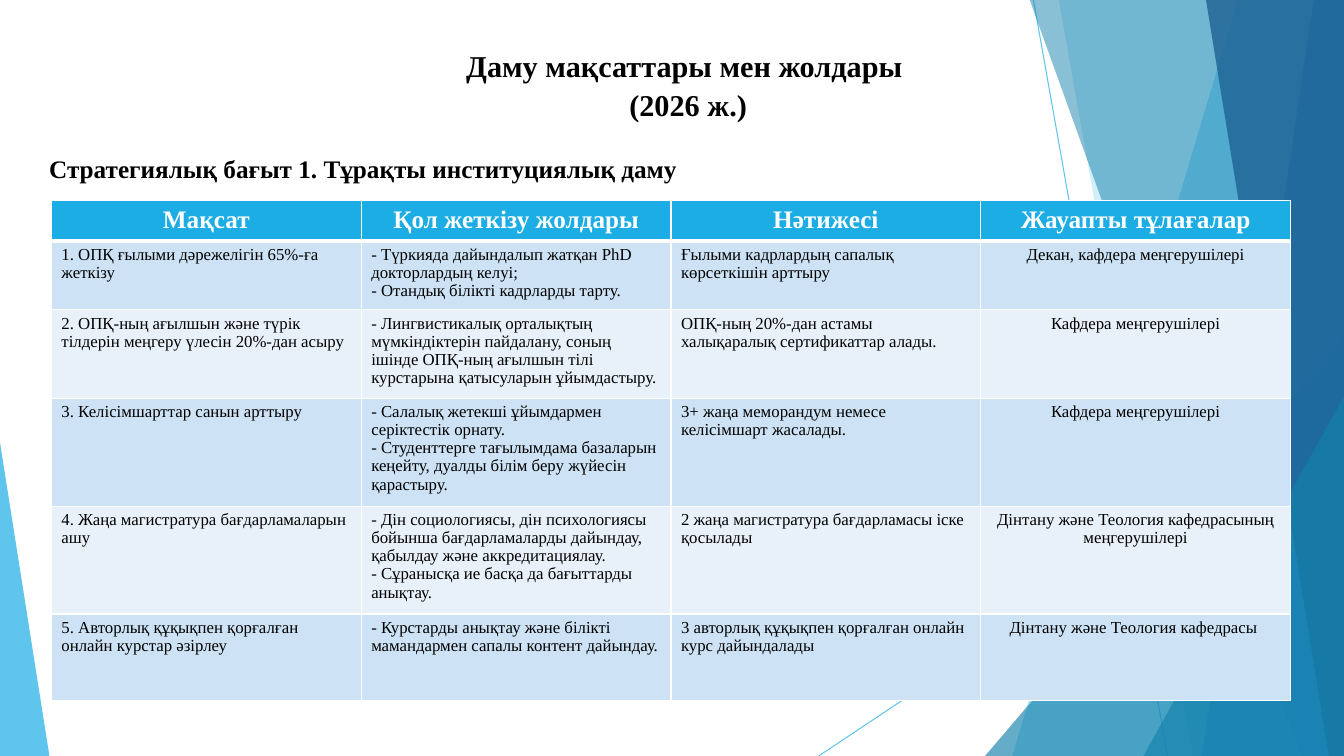
from dataclasses import dataclass

from lxml import etree
from pptx import Presentation
from pptx.dml.color import RGBColor
from pptx.enum.shapes import MSO_CONNECTOR, MSO_SHAPE
from pptx.enum.text import PP_ALIGN
from pptx.oxml.ns import qn
from pptx.util import Inches, Pt

LEFT, CENTER = PP_ALIGN.LEFT, PP_ALIGN.CENTER
STRAIGHT, TRIANGLE = MSO_CONNECTOR.STRAIGHT, MSO_SHAPE.ISOSCELES_TRIANGLE


@dataclass(frozen=True)
class Theme:
    font: str = "Times New Roman"
    title: float = 21.6
    heading: float = 18
    body: float = 12
    ink: str = "000000"
    white: str = "FFFFFF"
    sky: str = "1CADE4"
    teal: str = "1482AC"
    blue: str = "2683C6"
    navy: str = "1D6294"
    bands: tuple = ("CDE3F5", "E8F1FA")


THEME = Theme()

TITLE = "Даму мақсаттары мен жолдары \v(2026 ж.)"
DIRECTION = "Стратегиялық бағыт 1. Тұрақты институциялық даму"
HEADER = ("Мақсат", "Қол жеткізу жолдары", "Нәтижесі", "Жауапты тұлағалар")
GOALS = [
    ("1. ОПҚ ғылыми дәрежелігін 65%-ға жеткізу",
     "- Түркияда дайындалып жатқан PhD докторлардың келуі;\n"
     "- Отандық білікті кадрларды тарту.",
     "Ғылыми кадрлардың сапалық көрсеткішін арттыру",
     "Декан, кафдера меңгерушілері"),
    ("2. ОПҚ-ның ағылшын және түрік тілдерін меңгеру үлесін 20%-дан асыру",
     "- Лингвистикалық орталықтың мүмкіндіктерін пайдалану, соның ішінде "
     "ОПҚ-ның ағылшын тілі курстарына қатысуларын ұйымдастыру.",
     "ОПҚ-ның 20%-дан астамы халықаралық сертификаттар алады.",
     "Кафдера меңгерушілері"),
    ("3. Келісімшарттар санын арттыру",
     "- Салалық жетекші ұйымдармен серіктестік орнату.\n"
     "- Студенттерге тағылымдама базаларын кеңейту, дуалды білім беру "
     "жүйесін қарастыру.",
     "3+ жаңа меморандум немесе келісімшарт жасалады.",
     "Кафдера меңгерушілері"),
    ("4. Жаңа магистратура бағдарламаларын ашу",
     "- Дін социологиясы, дін психологиясы бойынша бағдарламаларды дайындау, "
     "қабылдау және аккредитациялау.\n"
     "- Сұранысқа ие басқа да бағыттарды анықтау.",
     "2 жаңа магистратура бағдарламасы іске қосылады",
     "Дінтану және Теология кафедрасының меңгерушілері"),
    ("5. Авторлық құқықпен қорғалған онлайн курстар әзірлеу",
     "- Курстарды анықтау және білікті мамандармен сапалы контент дайындау.",
     "3 авторлық құқықпен қорғалған онлайн курс дайындалады",
     "Дінтану және Теология кафедрасы "),
]

WIDTH, HEIGHT = 13.33, 7.5
BLEED = -0.01
TABLE_LEFT, TABLE_TOP, TABLE_WIDTH = 0.51, 1.99, 12.29
ROW_HEIGHTS = (0.38, 0.67, 0.86, 1.05, 1.05, 0.86)

RAYS = [((10.25, 0), (11.58, HEIGHT)), ((WIDTH, 4.03), (8.12, HEIGHT))]
# Facets reach the right edge: (x at top, x at bottom, colour, opacity %)
# Wedges stand on the bottom edge: (left, top, width, apex, colour, opacity %)
BACKDROP = [
    ("facet", 12.28, 10.04, THEME.sky, 36),
    ("facet", 10.5, 11.83, THEME.sky, 20),
    ("wedge", 9.77, 3.33, 3.56, 1, THEME.teal, 66),
    ("facet", 10.21, 12.91, THEME.teal, 50),
    ("facet", 13.03, 11.92, THEME.blue, 70),
    ("facet", 11.96, 13.18, THEME.navy, 80),
    ("wedge", 11.34, 3.93, 1.99, 1, THEME.teal, 66),
    ("wedge", 0, 4.39, 0.49, 0, THEME.sky, 70),
]


def set_opacity(element, percent):
    for colour in element.iter(qn("a:srgbClr")):
        etree.SubElement(colour, qn("a:alpha"), val=str(percent * 1000))


def paint(shape, colour, opacity):
    shape.shadow.inherit = False
    shape.fill.solid()
    shape.fill.fore_color.rgb = RGBColor.from_string(colour)
    shape.line.fill.background()
    set_opacity(shape.element, opacity)


def add_ray(slide, start, end):
    ray = slide.shapes.add_connector(STRAIGHT, *map(Inches, start + end))
    ray.line.width = Pt(0.75)
    ray.line.color.rgb = RGBColor.from_string(THEME.sky)
    set_opacity(ray.element, 70)
    etree.SubElement(ray.element.spPr, qn("a:effectLst"))


def add_facet(slide, top_x, bottom_x, colour, opacity):
    corners = [(WIDTH, BLEED), (WIDTH, HEIGHT), (bottom_x, HEIGHT)]
    outline = slide.shapes.build_freeform(Inches(top_x), Inches(BLEED))
    outline.add_line_segments([(Inches(x), Inches(y)) for x, y in corners])
    paint(outline.convert_to_shape(), colour, opacity)


def add_wedge(slide, left, top, width, apex, colour, opacity):
    box = map(Inches, (left, top, width, HEIGHT - top))
    wedge = slide.shapes.add_shape(TRIANGLE, *box)
    wedge.adjustments[0] = apex
    paint(wedge, colour, opacity)


def write(frame, text, size=THEME.body, colour=THEME.ink, bold=False,
          align=LEFT, spacing=1.0):
    """Fill a text frame, one paragraph per line of text."""
    frame.word_wrap = True
    for index, line in enumerate(text.split("\n")):
        paragraph = frame.add_paragraph() if index else frame.paragraphs[0]
        paragraph.text = line
        paragraph.alignment = align
        paragraph.line_spacing = spacing
        for run in paragraph.runs:
            run.font.name = THEME.font
            run.font.size = Pt(size)
            run.font.bold = bold
            run.font.color.rgb = RGBColor.from_string(colour)


def add_text(slide, box, text, **style):
    write(slide.shapes.add_textbox(*map(Inches, box)).text_frame, text, **style)


def style_cell(cell, colour, edges):
    """Edges give the white border widths in points: left, right, top, bottom."""
    properties = cell._tc.get_or_add_tcPr()
    for side, width in zip("LRTB", edges):
        border = etree.SubElement(properties, qn(f"a:ln{side}"), w=str(Pt(width)))
        fill = etree.SubElement(border, qn("a:solidFill"))
        etree.SubElement(fill, qn("a:srgbClr"), val=THEME.white)
    cell.fill.solid()
    cell.fill.fore_color.rgb = RGBColor.from_string(colour)


def add_goals_table(slide):
    rows = [HEADER, *GOALS]
    box = (TABLE_LEFT, TABLE_TOP, TABLE_WIDTH, sum(ROW_HEIGHTS))
    table = slide.shapes.add_table(len(rows), len(HEADER), *map(Inches, box)).table
    for column in table.columns:
        column.width = Inches(TABLE_WIDTH / len(HEADER))
    for r, texts in enumerate(rows):
        table.rows[r].height = Inches(ROW_HEIGHTS[r])
        for c, text in enumerate(texts):
            cell = table.cell(r, c)
            if r == 0:
                style_cell(cell, THEME.sky, (1, 1, 1, 3))
                write(cell.text_frame, text, size=THEME.heading,
                      colour=THEME.white, bold=True, align=CENTER)
            else:
                style_cell(cell, THEME.bands[(r - 1) % 2],
                           (1, 1, 3 if r == 1 else 1, 1))
                write(cell.text_frame, text, spacing=0.97,
                      align=CENTER if c == len(HEADER) - 1 else LEFT)


def main():
    deck = Presentation()
    deck.slide_width, deck.slide_height = Inches(WIDTH), Inches(HEIGHT)
    slide = deck.slides.add_slide(deck.slide_layouts[6])
    for start, end in RAYS:
        add_ray(slide, start, end)
    builders = {"facet": add_facet, "wedge": add_wedge}
    for kind, *geometry in BACKDROP:
        builders[kind](slide, *geometry)
    add_text(slide, (0.74, 0.4, 12.17, 0.88), TITLE, size=THEME.title,
             bold=True, align=CENTER, spacing=1.06)
    add_goals_table(slide)
    add_text(slide, (0.39, 1.47, 10.23, 0.4), DIRECTION, size=THEME.heading,
             bold=True)
    deck.save("out.pptx")


if __name__ == "__main__":
    main()
